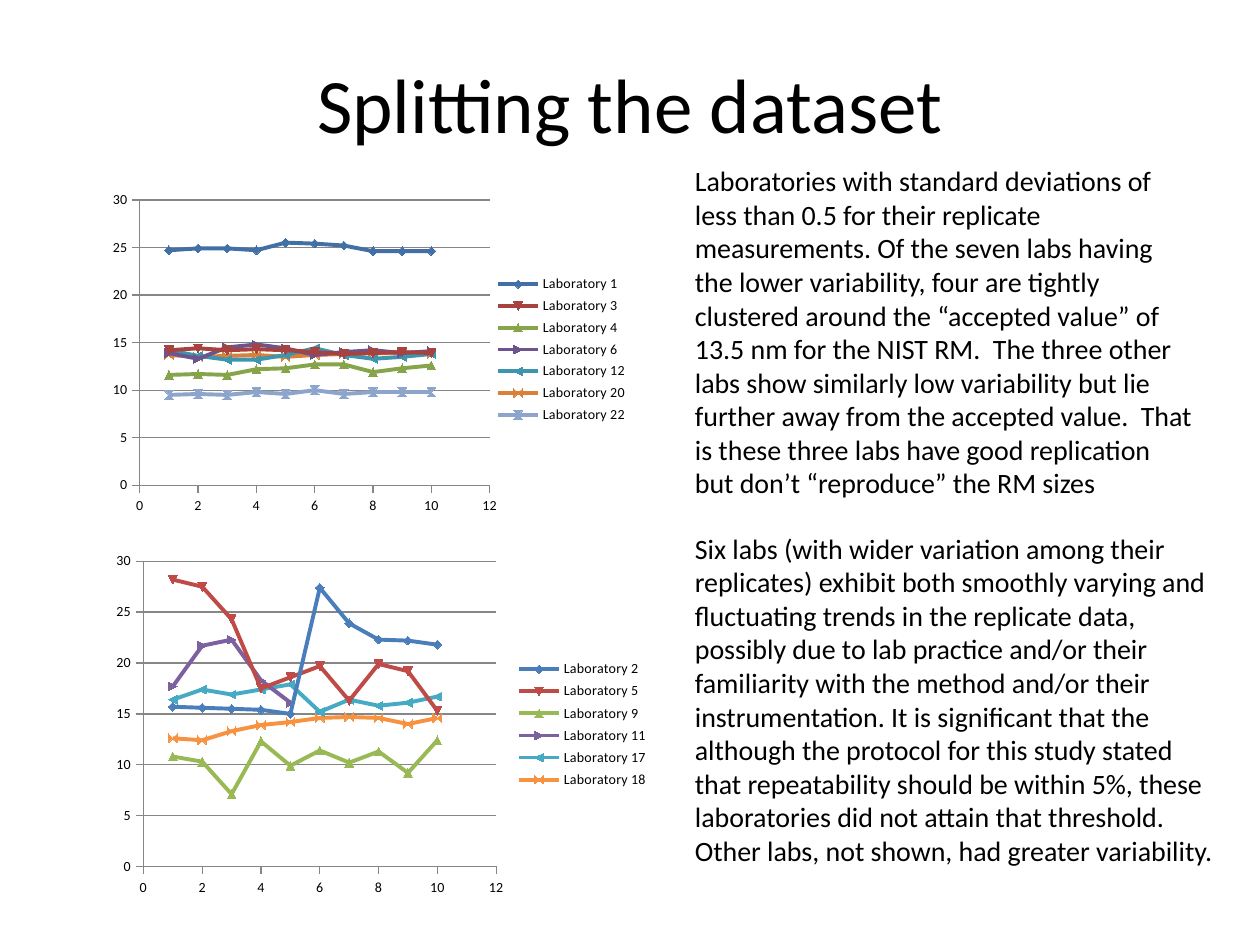
from dataclasses import dataclass
from typing import NamedTuple

from lxml.etree import SubElement
from pptx import Presentation
from pptx.chart.data import XyChartData
from pptx.dml.color import RGBColor
from pptx.enum.chart import XL_CHART_TYPE as ChartType
from pptx.enum.chart import XL_LEGEND_POSITION as LegendPosition
from pptx.enum.chart import XL_TICK_MARK as TickMark
from pptx.enum.text import MSO_ANCHOR as Anchor
from pptx.enum.text import MSO_AUTO_SIZE as AutoSize
from pptx.enum.text import PP_ALIGN as Align
from pptx.oxml.ns import qn
from pptx.util import Inches, Pt

COLUMNS, ROWS = 120, 90  # twelve grid units to the inch


@dataclass(frozen=True)
class Theme:
    font: str = "Calibri"
    title_size: int = 44
    body_size: int = 16
    chart_size: int = 10
    label_size: int = 8
    series_width: float = 2.25
    axis_width: float = 0.75
    text: str = "000000"
    axis: str = "868686"
    deep_lines: tuple[str, ...] = ("416FA6", "A8423F", "86A44A", "6E548D",
                                   "3D96AE", "DA8137", "8EA5CB")
    bright_lines: tuple[str, ...] = ("4A7EBB", "BE4B48", "98B954", "7D60A0",
                                     "46AAC5", "F79240")


THEME = Theme()


class Area(NamedTuple):
    """A block of the grid, in columns and rows."""
    column: float
    row: float
    columns: float
    rows: float


class PlotShare(NamedTuple):
    """The inner plot area, in shares of the chart's size."""
    x: float
    y: float
    w: float
    h: float


@dataclass(frozen=True)
class LabChart:
    area: Area
    plot: PlotShare
    colors: tuple[str, ...]
    replicates: dict[int, list[float]]  # laboratory number: sizes in nm


@dataclass(frozen=True)
class TextBlock:
    area: Area
    paragraphs: tuple[str, ...]
    size: int = THEME.body_size
    align: Align = Align.LEFT
    anchor: Anchor = Anchor.TOP
    auto_size: AutoSize = AutoSize.SHAPE_TO_FIT_TEXT


LAB_CHARTS = (
    LabChart(Area(9, 18, 52, 31), PlotShare(0.083, 0.034, 0.641, 0.889), THEME.deep_lines, {
        1: [24.7, 24.9, 24.9, 24.7, 25.5, 25.4, 25.2, 24.6, 24.6, 24.6],
        3: [14.2, 14.4, 14.2, 14.3, 14.2, 14, 13.8, 13.9, 14, 13.9],
        4: [11.6, 11.7, 11.6, 12.2, 12.3, 12.7, 12.7, 11.9, 12.3, 12.6],
        6: [13.9, 13.3, 14.5, 14.8, 14.4, 13.7, 14, 14.2, 13.9, 14.1],
        12: [14.2, 13.6, 13.2, 13.2, 13.7, 14.4, 13.7, 13.3, 13.5, 13.8],
        20: [13.7, 13.5, 13.6, 13.7, 13.5, 13.7, 13.8, 13.9, 13.9, 13.8],
        22: [9.5, 9.6, 9.5, 9.8, 9.6, 10, 9.6, 9.8, 9.8, 9.8],
    }),
    LabChart(Area(10, 52, 53, 34), PlotShare(0.069, 0.043, 0.634, 0.855), THEME.bright_lines, {
        2: [15.7, 15.6, 15.5, 15.4, 15, 27.4, 23.9, 22.3, 22.2, 21.8],
        5: [28.2, 27.5, 24.3, 17.5, 18.6, 19.7, 16.3, 19.9, 19.2, 15.3],
        9: [10.8, 10.3, 7.1, 12.3, 9.9, 11.4, 10.2, 11.3, 9.2, 12.4],
        11: [17.7, 21.7, 22.3, 18.3, 16.1],
        17: [16.4, 17.4, 16.9, 17.4, 17.9, 15.2, 16.4, 15.8, 16.1, 16.7],
        18: [12.6, 12.4, 13.3, 13.9, 14.2, 14.6, 14.7, 14.6, 14, 14.6],
    }),
)

TEXT_BLOCKS = (
    TextBlock(Area(6, 3.6, 108, 12.4), ("Splitting the dataset",), THEME.title_size,
              Align.CENTER, Anchor.MIDDLE, AutoSize.NONE),
    TextBlock(Area(65, 15, 50, 33.5), (
        "Laboratories with standard deviations of less than 0.5 for their replicate "
        "measurements. Of the seven labs having the lower variability, four are tightly "
        "clustered around the “accepted value” of 13.5 nm for the NIST RM.  The three other "
        "labs show similarly low variability but lie further away from the accepted value.  "
        "That is these three labs have good replication but don’t “reproduce” the RM sizes",
    )),
    TextBlock(Area(65, 50, 52, 33.5), (
        "Six labs (with wider variation among their replicates) exhibit both smoothly varying "
        "and fluctuating trends in the replicate data, possibly due to lab practice and/or "
        "their familiarity with the method and/or their instrumentation. It is significant "
        "that the although the protocol for this study stated that repeatability should be "
        "within 5%, these laboratories did not attain that threshold.",
        "Other labs, not shown, had greater variability.",
    )),
)


def place(prs, area: Area) -> tuple[int, int, int, int]:
    """Turn a grid area into left, top, width and height."""
    column, row = prs.slide_width / COLUMNS, prs.slide_height / ROWS
    return (round(area.column * column), round(area.row * row),
            round(area.columns * column), round(area.rows * row))


def style_font(font, size: int) -> None:
    font.name = THEME.font
    font.size = Pt(size)
    font.color.rgb = RGBColor.from_string(THEME.text)


def style_line(line, color: str, width: float) -> None:
    line.color.rgb = RGBColor.from_string(color)
    line.width = Pt(width)


def style_axis(axis, maximum: float, step: float, grid: bool) -> None:
    axis.minimum_scale, axis.maximum_scale, axis.major_unit = 0, maximum, step
    axis.major_tick_mark, axis.minor_tick_mark = TickMark.OUTSIDE, TickMark.NONE
    axis.has_major_gridlines = grid
    axis.has_title = False
    style_font(axis.tick_labels.font, THEME.label_size)
    style_line(axis.format.line, THEME.axis, THEME.axis_width)
    if grid:
        style_line(axis.major_gridlines.format.line, THEME.axis, THEME.axis_width)


def fix_plot(chart, plot: PlotShare) -> None:
    """Pin the inner plot area, which python-pptx cannot place itself."""
    plot_area = chart.plots[0]._element.getparent()
    for automatic in plot_area.findall(qn("c:layout")):
        plot_area.remove(automatic)
    layout = SubElement(plot_area, qn("c:layout"))
    plot_area.insert(0, layout)
    manual = SubElement(layout, qn("c:manualLayout"))
    settings = {"layoutTarget": "inner", "xMode": "edge", "yMode": "edge", **plot._asdict()}
    for tag, value in settings.items():
        SubElement(manual, qn(f"c:{tag}")).set("val", str(value))


def add_lab_chart(prs, slide, lab_chart: LabChart) -> None:
    data = XyChartData()
    for laboratory, sizes in lab_chart.replicates.items():
        series = data.add_series(f"Laboratory {laboratory}")
        for replicate, size in enumerate(sizes, start=1):
            series.add_data_point(replicate, size)
    chart = slide.shapes.add_chart(ChartType.XY_SCATTER_LINES,
                                   *place(prs, lab_chart.area), data).chart
    chart.has_title = False
    style_font(chart.font, THEME.chart_size)
    chart.has_legend = True
    chart.legend.position = LegendPosition.RIGHT
    chart.legend.include_in_layout = False
    style_font(chart.legend.font, THEME.label_size)
    style_axis(chart.category_axis, 12, 2, grid=False)
    style_axis(chart.value_axis, 30, 5, grid=True)
    chart.plots[0].vary_by_categories = False
    for series, color in zip(chart.plots[0].series, lab_chart.colors):
        style_line(series.format.line, color, THEME.series_width)
        series.smooth = False
    fix_plot(chart, lab_chart.plot)


def add_text(prs, slide, block: TextBlock) -> None:
    frame = slide.shapes.add_textbox(*place(prs, block.area)).text_frame
    frame.word_wrap = True
    frame.auto_size = block.auto_size
    frame.vertical_anchor = block.anchor
    for index, wording in enumerate(block.paragraphs):
        paragraph = frame.add_paragraph() if index else frame.paragraphs[0]
        paragraph.alignment = block.align
        run = paragraph.add_run()
        run.text = wording
        style_font(run.font, block.size)


def main() -> None:
    prs = Presentation()
    prs.slide_width, prs.slide_height = Inches(10), Inches(7.5)
    slide = prs.slides.add_slide(prs.slide_layouts[6])
    for lab_chart in LAB_CHARTS:
        add_lab_chart(prs, slide, lab_chart)
    for block in TEXT_BLOCKS:
        add_text(prs, slide, block)
    prs.save("out.pptx")


if __name__ == "__main__":
    main()
